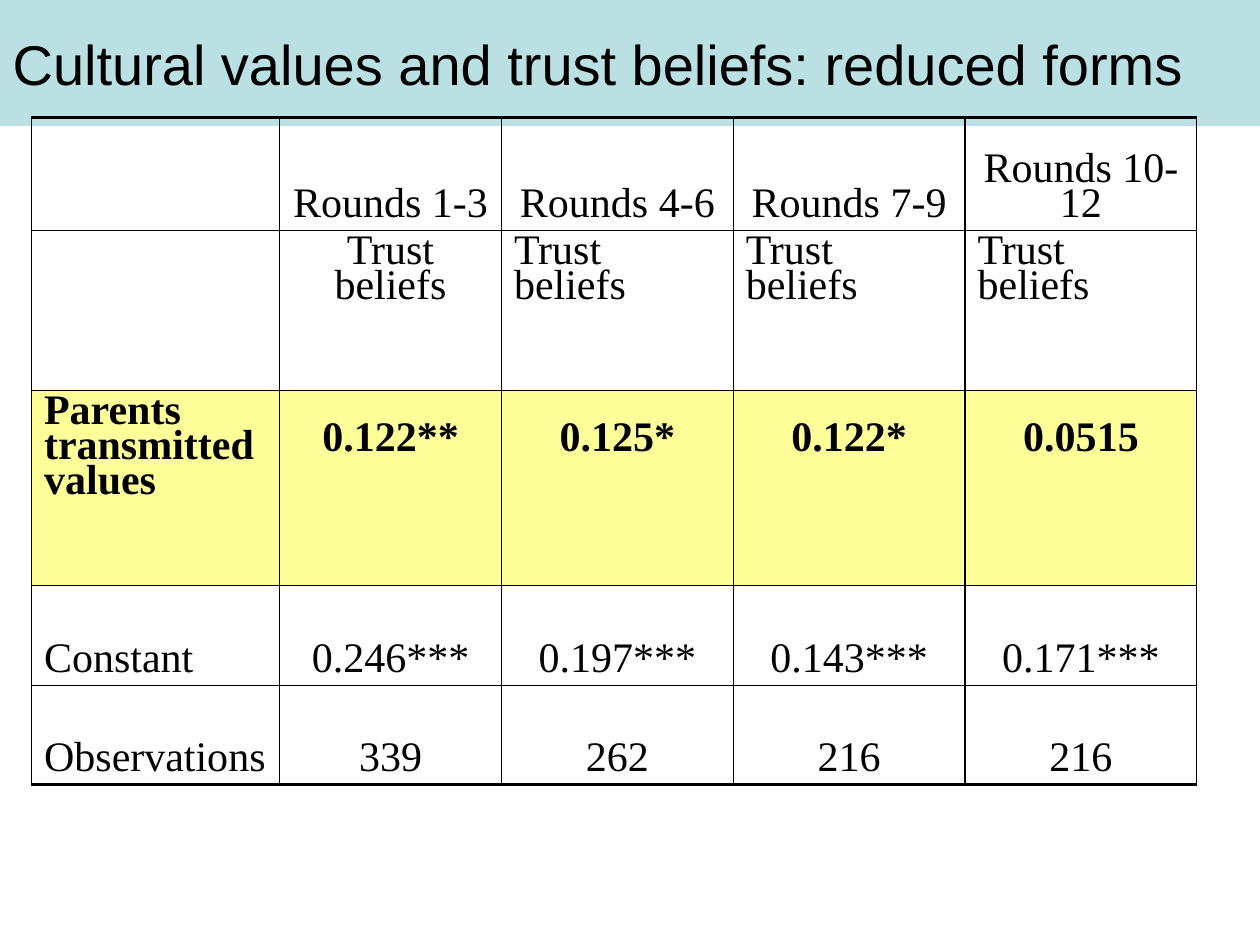
from lxml import etree
from pptx import Presentation
from pptx import util as u
from pptx.dml.color import RGBColor
from pptx.enum import text
from pptx.oxml import ns

BLACK, BAND, HIGHLIGHT = "000000", "BBE0E3", "FFFF99"
COLUMN_WIDTHS = [1.97, 1.76, 1.84, 1.84, 1.84]
ROW_HEIGHTS = [0.9, 1.27, 1.55, 0.79, 0.79]
RULE_WIDTHS = [2, 0.75, 1, 0.75, 0.75, 2]
SIDE_WIDTH = 0.75
TRUST_ROW, PARENTS_ROW = 1, 2
RESULTS = [
    ["", "Rounds 1-3", "Rounds 4-6", "Rounds 7-9", "Rounds 10-12"],
    ["", "Trust beliefs", "Trust beliefs", "Trust beliefs", "Trust beliefs"],
    ["Parents transmitted values", "0.122**", "0.125*", "0.122*", "0.0515"],
    ["Constant", "0.246***", "0.197***", "0.143***", "0.171***"],
    ["Observations", "339", "262", "216", "216"],
]


def color(hex_code):
    """Turn a hex string into a colour."""
    return RGBColor.from_string(hex_code)


def add_run(paragraph, wording, size, font_name, bold=False):
    """Add one formatted black run to a paragraph."""
    run = paragraph.add_run()
    run.text = wording
    run.font.size = u.Pt(size)
    run.font.name = font_name
    run.font.bold = bold
    run.font.color.rgb = color(BLACK)


def format_title(slide, width, height, wording):
    """Make the title a coloured band across the top."""
    title = slide.shapes.title
    title.left, title.top, title.width, title.height = 0, 0, width, height
    title.fill.solid()
    title.fill.fore_color.rgb = color(BAND)
    frame = title.text_frame
    frame.word_wrap = True
    frame.auto_size = text.MSO_AUTO_SIZE.NONE
    frame.vertical_anchor = text.MSO_ANCHOR.MIDDLE
    heading = frame.paragraphs[0]
    heading.alignment = text.PP_ALIGN.LEFT
    add_run(heading, wording, 32, "Arial")


def add_borders(cell, top, bottom):
    """Draw the four black borders of a cell."""
    properties = cell._tc.get_or_add_tcPr()
    sides = {"L": SIDE_WIDTH, "R": SIDE_WIDTH, "T": top, "B": bottom}
    for side, width in sides.items():
        border = etree.SubElement(properties, ns.qn(f"a:ln{side}"), w=str(u.Pt(width)))
        fill = etree.SubElement(border, ns.qn("a:solidFill"))
        etree.SubElement(fill, ns.qn("a:srgbClr"), val=BLACK)


def format_cell(cell, row, column, wording):
    """Fill, border and write one cell according to its place."""
    add_borders(cell, RULE_WIDTHS[row], RULE_WIDTHS[row + 1])
    highlighted = row == PARENTS_ROW
    if highlighted:
        cell.fill.solid()
        cell.fill.fore_color.rgb = color(HIGHLIGHT)
    else:
        cell.fill.background()
    at_top = row in (TRUST_ROW, PARENTS_ROW)
    cell.vertical_anchor = text.MSO_ANCHOR.TOP if at_top else text.MSO_ANCHOR.BOTTOM
    if highlighted and column:
        cell.margin_top = u.Inches(0.26)
    entry = cell.text_frame.paragraphs[0]
    left = column == 0 or (row == TRUST_ROW and column > 1)
    entry.alignment = text.PP_ALIGN.LEFT if left else text.PP_ALIGN.CENTER
    entry.line_spacing = 0.75
    if wording:
        add_run(entry, wording, 24, "Times New Roman", highlighted)


def add_results(slide):
    """Add the table of regression results."""
    size = [u.Inches(sum(lengths)) for lengths in (COLUMN_WIDTHS, ROW_HEIGHTS)]
    results = slide.shapes.add_table(
        len(ROW_HEIGHTS), len(COLUMN_WIDTHS), u.Inches(0.25), u.Inches(0.93), *size
    ).table
    results.first_row = results.horz_banding = False
    for column, width in zip(results.columns, COLUMN_WIDTHS):
        column.width = u.Inches(width)
    for row, height in zip(results.rows, ROW_HEIGHTS):
        row.height = u.Inches(height)
    for row, entries in enumerate(RESULTS):
        for column, wording in enumerate(entries):
            format_cell(results.cell(row, column), row, column, wording)


def main():
    """Build and save the slide."""
    deck = Presentation()
    deck.slide_width, deck.slide_height = u.Inches(10), u.Inches(7.5)
    slide = deck.slides.add_slide(deck.slide_layouts.get_by_name("Title Only"))
    format_title(slide, deck.slide_width, u.Inches(1),
                 "Cultural values and trust beliefs: reduced forms")
    add_results(slide)
    deck.save("out.pptx")


if __name__ == "__main__":
    main()
